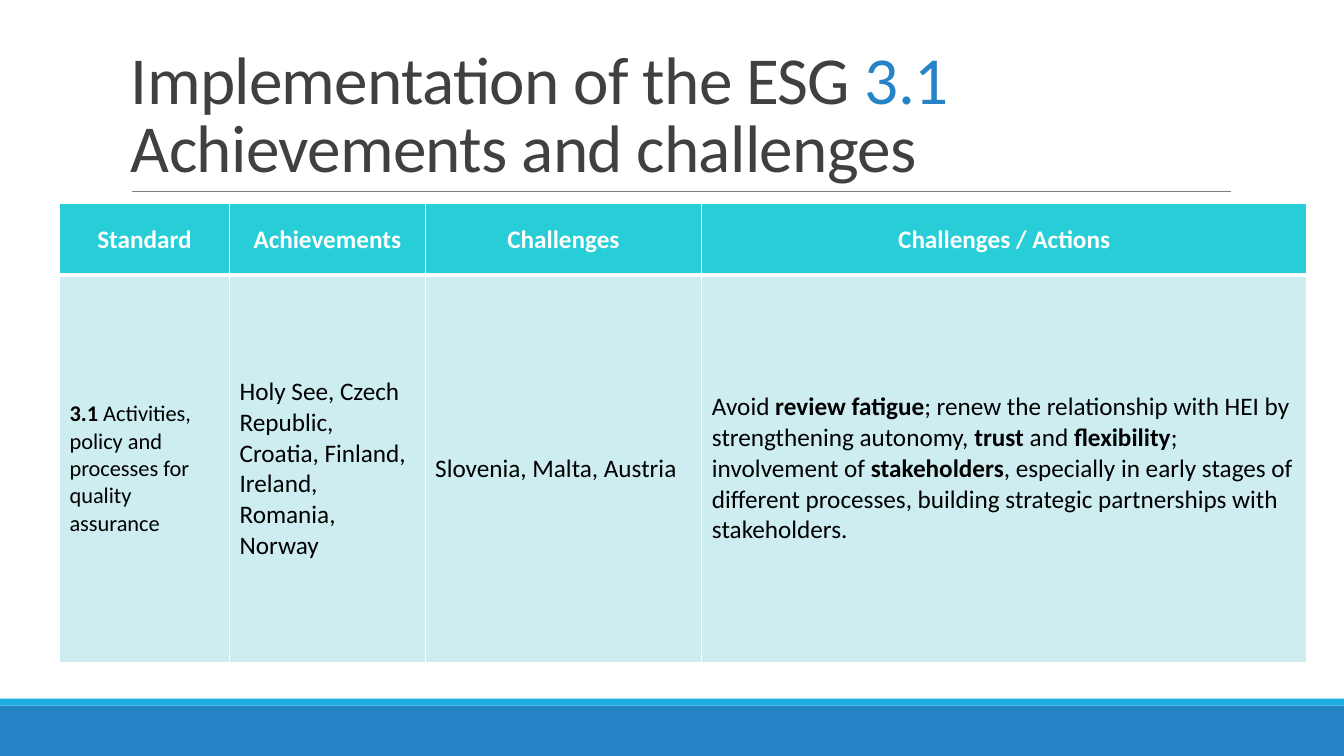
from dataclasses import dataclass

from lxml import etree
from pptx import Presentation
from pptx import util as u
from pptx.dml.color import RGBColor
from pptx.enum import shapes, text
from pptx.oxml import ns

Pt = u.Pt
BLUE = RGBColor(0x26, 0x83, 0xC6)
SKY = RGBColor(0x1C, 0xAD, 0xE4)
GREY = RGBColor(0x80, 0x80, 0x80)
CHARCOAL = RGBColor(0x40, 0x40, 0x40)
TEAL = RGBColor(0x27, 0xCE, 0xD7)
PALE_TEAL = RGBColor(0xCD, 0xED, 0xF0)
WHITE = RGBColor(0xFF, 0xFF, 0xFF)
BLACK = RGBColor(0, 0, 0)
FONT = "Calibri"


@dataclass
class Band:
    top: float
    height: float
    color: RGBColor


@dataclass
class Column:
    heading: str
    width: float
    body: list[tuple[str, bool]]
    size: float = 18


BANDS = [Band(504, 36, BLUE), Band(499, 5, SKY)]
COLUMNS = [
    Column("Standard", 121.5, [
        ("3.1 ", True),
        ("Activities, policy and processes for quality assurance", False),
    ], 16),
    Column("Achievements", 139.7, [
        ("Holy See, Czech Republic, Croatia, Finland, Ireland, Romania, Norway", False),
    ]),
    Column("Challenges", 197.7, [("Slovenia, Malta, Austria", False)]),
    Column("Challenges / Actions", 432, [
        ("Avoid ", False),
        ("review fatigue", True),
        ("; renew the relationship with HEI by strengthening autonomy, ", False),
        ("trust", True),
        (" and ", False),
        ("flexibility", True),
        ("; involvement of ", False),
        ("stakeholders", True),
        (", especially in early stages of different processes, "
         "building strategic partnerships with stakeholders.", False),
    ]),
]
ROW_HEIGHTS = [51.1, 276.5]


def add_run(paragraph, words: str, *, size: float, color: RGBColor,
            bold: bool = False, spacing: float = 0) -> None:
    run = paragraph.add_run()
    run.text = words
    run.font.name = FONT
    run.font.size = Pt(size)
    run.font.bold = bold
    run.font.color.rgb = color
    if spacing:
        run.font._element.set("spc", str(round(spacing * 100)))


def add_band(slide, band: Band, width: int) -> None:
    bar = slide.shapes.add_shape(
        shapes.MSO_SHAPE.RECTANGLE, 0, Pt(band.top), width, Pt(band.height))
    bar.shadow.inherit = False
    bar.fill.solid()
    bar.fill.fore_color.rgb = band.color
    bar.line.fill.background()


def add_title_rule(slide) -> None:
    rule = slide.shapes.add_connector(
        shapes.MSO_CONNECTOR.STRAIGHT, Pt(94.3), Pt(136.8), Pt(879), Pt(136.8))
    rule.line.color.rgb = GREY
    rule.line.width = Pt(0.5)
    etree.SubElement(rule._element.spPr, ns.qn("a:effectLst"))


def add_title(slide) -> None:
    title = slide.shapes.add_textbox(Pt(86.4), Pt(22.3), Pt(791.3), Pt(114.5))
    frame = title.text_frame
    frame.word_wrap = True
    frame.vertical_anchor = text.MSO_ANCHOR.BOTTOM
    paragraph = frame.paragraphs[0]
    paragraph.line_spacing = 0.85
    for words, color in [("Implementation of the ESG ", CHARCOAL), ("3.1 ", BLUE),
                         ("Achievements and challenges", CHARCOAL)]:
        add_run(paragraph, words, size=48, color=color, spacing=-0.5)


def set_borders(cell, *, top: float, bottom: float) -> None:
    properties = cell._tc.get_or_add_tcPr()
    widths = {"lnL": 1, "lnR": 1, "lnT": top, "lnB": bottom}
    for position, (side, width) in enumerate(widths.items()):
        border = etree.Element(ns.qn(f"a:{side}"), w=str(Pt(width)))
        fill = etree.SubElement(border, ns.qn("a:solidFill"))
        etree.SubElement(fill, ns.qn("a:srgbClr"), val=str(WHITE))
        properties.insert(position, border)


def fill_cell(cell, runs: list[tuple[str, bool]], *, size: float, color: RGBColor,
              fill: RGBColor, align: text.PP_ALIGN, top: float, bottom: float) -> None:
    cell.fill.solid()
    cell.fill.fore_color.rgb = fill
    set_borders(cell, top=top, bottom=bottom)
    cell.vertical_anchor = text.MSO_ANCHOR.MIDDLE
    paragraph = cell.text_frame.paragraphs[0]
    paragraph.alignment = align
    for words, bold in runs:
        add_run(paragraph, words, size=size, color=color, bold=bold)


def add_standards_table(slide) -> None:
    width = sum(column.width for column in COLUMNS)
    table = slide.shapes.add_table(
        len(ROW_HEIGHTS), len(COLUMNS), Pt(42.5), Pt(145.5),
        Pt(width), Pt(sum(ROW_HEIGHTS))).table
    table.horz_banding = False
    for row, height in zip(table.rows, ROW_HEIGHTS):
        row.height = Pt(height)
    for index, column in enumerate(COLUMNS):
        table.columns[index].width = Pt(column.width)
        fill_cell(table.cell(0, index), [(column.heading, True)], size=18, color=WHITE,
                  fill=TEAL, align=text.PP_ALIGN.CENTER, top=1, bottom=3)
        fill_cell(table.cell(1, index), column.body, size=column.size, color=BLACK,
                  fill=PALE_TEAL, align=text.PP_ALIGN.LEFT, top=3, bottom=1)


def main() -> None:
    deck = Presentation()
    deck.slide_width, deck.slide_height = Pt(960), Pt(540)
    slide = deck.slides.add_slide(deck.slide_layouts[6])
    for band in BANDS:
        add_band(slide, band, deck.slide_width)
    add_title_rule(slide)
    add_title(slide)
    add_standards_table(slide)
    deck.save("out.pptx")


if __name__ == "__main__":
    main()
